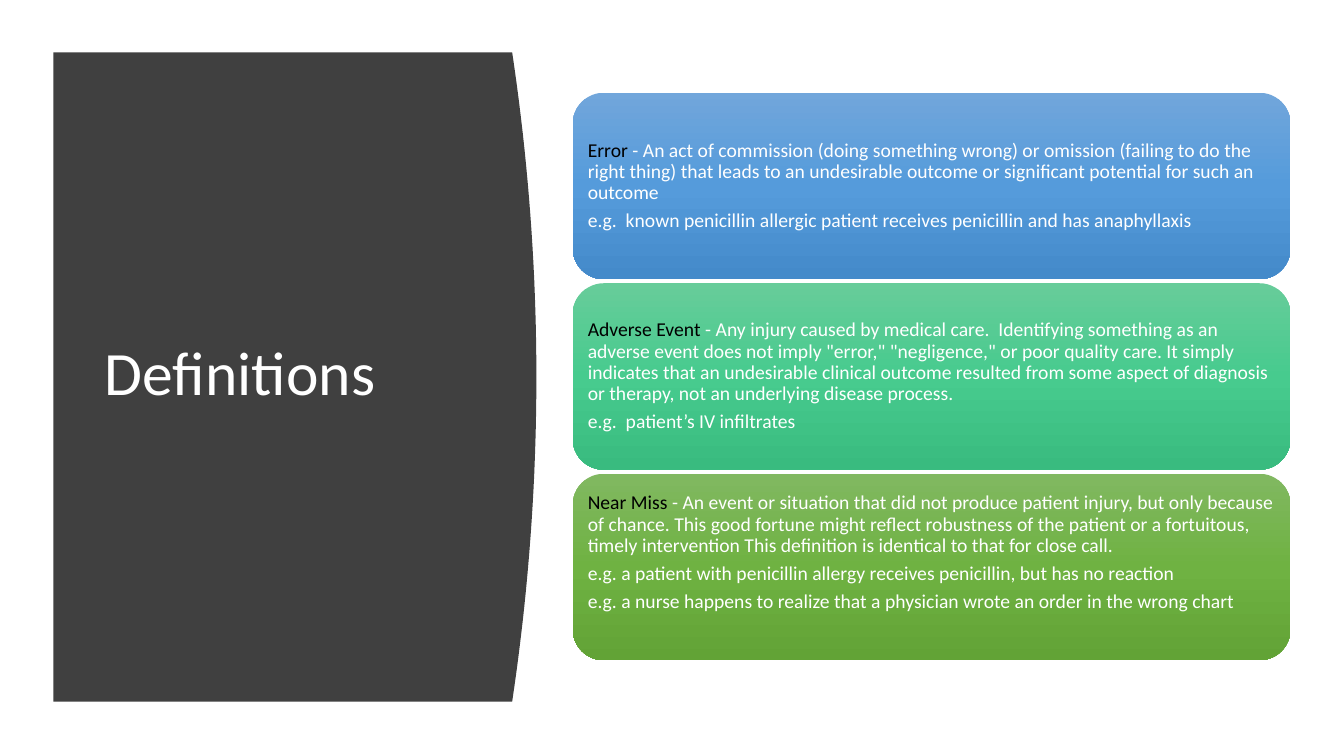
from copy import deepcopy

from pptx import Presentation
from pptx.dml.color import RGBColor
from pptx.enum.shapes import MSO_SHAPE as Shape
from pptx.enum.text import MSO_ANCHOR as Anchor, MSO_AUTO_SIZE as AutoSize, PP_ALIGN as Align
from pptx.util import Pt

EMU_PER_PX = 9144
FONT = "Calibri"
WHITE = "FFFFFF"
BLACK = "000000"
PANEL_GREY = "404040"
CARD_INSET = 6

DEFINITIONS = [
    {
        "term": "Error",
        "meaning": " - An act of commission (doing something wrong) or omission (failing to do the right thing) "
                   "that leads to an undesirable outcome or significant potential for such an outcome",
        "examples": ["e.g.  known penicillin allergic patient receives penicillin and has anaphyllaxis"],
        "gradient": ["71A6DB", "559BDB", "448ACA"],
        "space_below": 0,
    },
    {
        "term": "Adverse Event",
        "meaning": " - Any injury caused by medical care.  Identifying something as an adverse event does not imply "
                   "\"error,\" \"negligence,\" or poor quality care. It simply indicates that an undesirable clinical "
                   "outcome resulted from some aspect of diagnosis or therapy, not an underlying disease process.",
        "examples": ["e.g.  patient’s IV infiltrates"],
        "gradient": ["67CC9A", "47CB8E", "39BB7F"],
        "space_below": 0,
    },
    {
        "term": "Near Miss",
        "meaning": " - An event or situation that did not produce patient injury, but only because of chance. "
                   "This good fortune might reflect robustness of the patient or a fortuitous, timely intervention "
                   "This definition is identical to that for close call.",
        "examples": [
            "e.g. a patient with penicillin allergy receives penicillin, but has no reaction",
            "e.g. a nurse happens to realize that a physician wrote an order in the wrong chart",
        ],
        "gradient": ["81B861", "6FB242", "62A336"],
        "space_below": 28,
    },
]


def px(length):
    return round(length * EMU_PER_PX)


def color(hex_string):
    return RGBColor.from_string(hex_string)


def format_paragraph(paragraph, size):
    paragraph.alignment = Align.LEFT
    paragraph.line_spacing = 0.9
    paragraph.font.name = FONT
    paragraph.font.size = Pt(size)
    paragraph.font.color.rgb = color(WHITE)


def fill_gradient(shape, hex_colors):
    shape.fill.gradient()
    shape.fill.gradient_angle = 270
    stop_list = shape._element.spPr.xpath(".//a:gsLst")[0]
    stop_list.insert(1, deepcopy(stop_list[0]))
    for index, (stop, hex_color) in enumerate(zip(shape.fill.gradient_stops, hex_colors)):
        stop.position = index / 2
        stop.color.rgb = color(hex_color)


def add_curved_panel(slide, left, top, width, height):
    bulge, steps = 24, 40
    edge = []
    for step in range(steps + 1):
        offset = 2 * step / steps - 1
        edge.append((px(left + width - bulge * offset ** 2), px(top + height * step / steps)))
    builder = slide.shapes.build_freeform(px(left), px(top))
    builder.add_line_segments(edge + [(px(left), px(top + height))], close=True)
    panel = builder.convert_to_shape()
    panel.shadow.inherit = False
    panel.fill.solid()
    panel.fill.fore_color.rgb = color(PANEL_GREY)
    panel.line.fill.background()
    slide.shapes._spTree.insert(2, panel._element)


def place_title(slide, text, left, top, width, height):
    title = slide.shapes.title
    title.left, title.top, title.width, title.height = map(px, (left, top, width, height))
    frame = title.text_frame
    frame.text = text
    frame.word_wrap = True
    frame.auto_size = AutoSize.NONE
    frame.vertical_anchor = Anchor.MIDDLE
    format_paragraph(frame.paragraphs[0], 44)


def add_card(slide, definition, left, top, width, height):
    card = slide.shapes.add_shape(Shape.ROUNDED_RECTANGLE, *map(px, (left, top, width, height)))
    card.shadow.inherit = False
    card.line.fill.background()
    fill_gradient(card, definition["gradient"])

    frame = card.text_frame
    frame.word_wrap = True
    frame.vertical_anchor = Anchor.MIDDLE
    frame.margin_left = frame.margin_right = frame.margin_top = px(CARD_INSET)
    frame.margin_bottom = px(CARD_INSET + definition["space_below"])

    heading = frame.paragraphs[0]
    term = heading.add_run()
    term.text = definition["term"]
    term.font.color.rgb = color(BLACK)
    heading.add_run().text = definition["meaning"]
    for example in definition["examples"]:
        frame.add_paragraph().text = example
    for paragraph in frame.paragraphs:
        format_paragraph(paragraph, 14)
        paragraph.space_after = Pt(5)


def add_cards(slide, definitions, left, top, width, height):
    gap = 4
    card_height = (height - gap * (len(definitions) - 1)) / len(definitions)
    for index, definition in enumerate(definitions):
        add_card(slide, definition, left, top + index * (card_height + gap), width, card_height)


def main():
    presentation = Presentation()
    presentation.slide_width, presentation.slide_height = px(1333), px(750)
    slide = presentation.slides.add_slide(presentation.slide_layouts.get_by_name("Title Only"))
    add_curved_panel(slide, 53, 52, 479, 644)
    place_title(slide, "Definitions", 94, 111, 374, 524)
    add_cards(slide, DEFINITIONS, 568, 92, 712, 563)
    presentation.save("out.pptx")


if __name__ == "__main__":
    main()
